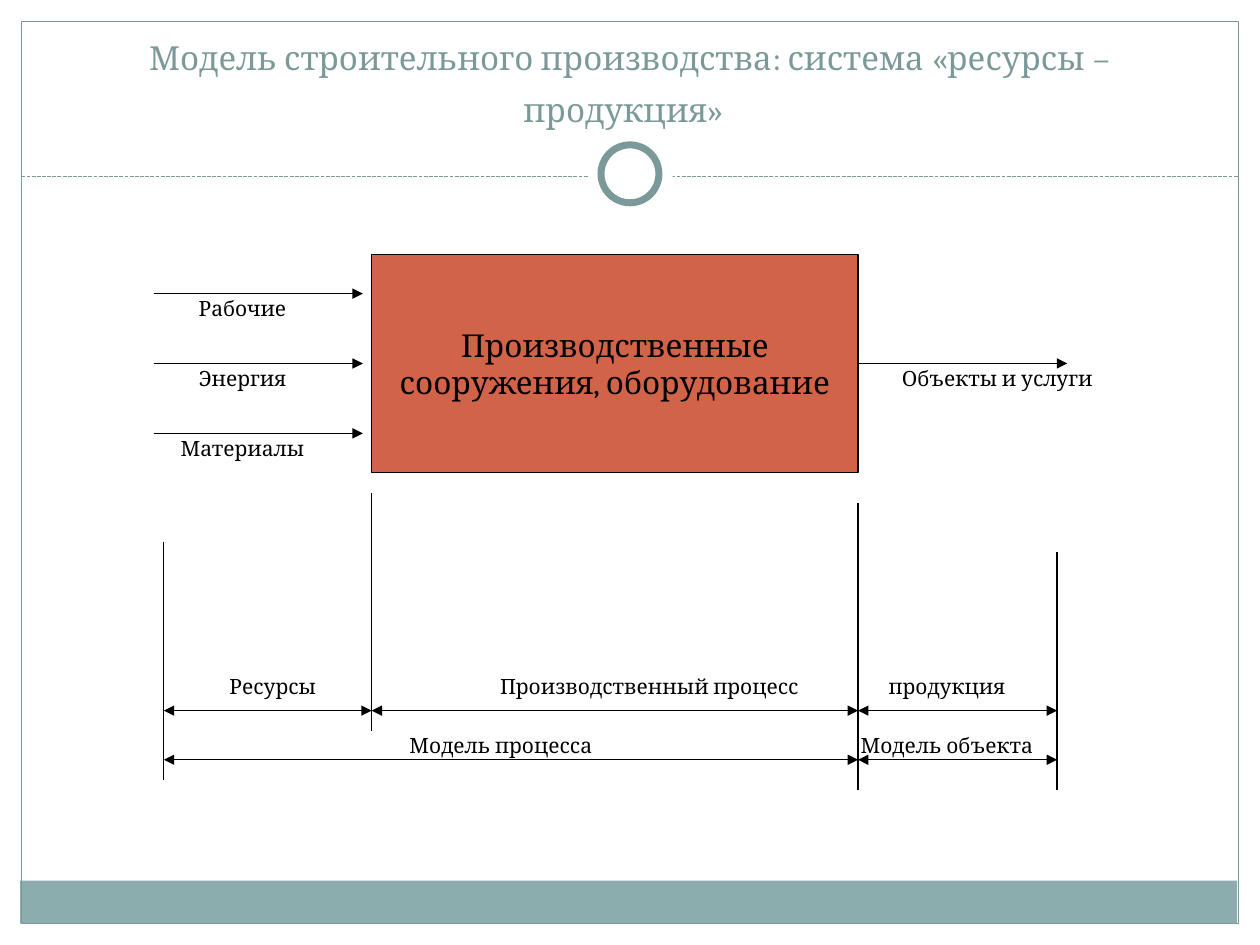
from lxml import etree
from pptx import Presentation
from pptx.dml.color import RGBColor
from pptx.enum.dml import MSO_LINE
from pptx.enum.shapes import MSO_CONNECTOR, MSO_SHAPE
from pptx.enum.text import MSO_ANCHOR, MSO_AUTO_SIZE, PP_ALIGN
from pptx.oxml.ns import qn
from pptx.util import Inches, Pt

RECT, OVAL = MSO_SHAPE.RECTANGLE, MSO_SHAPE.OVAL
STRAIGHT = MSO_CONNECTOR.STRAIGHT
DASH = MSO_LINE.SQUARE_DOT
CENTER = PP_ALIGN.CENTER
MIDDLE, BOTTOM = MSO_ANCHOR.MIDDLE, MSO_ANCHOR.BOTTOM
NO_FIT = MSO_AUTO_SIZE.NONE

FONT = "Cambria"
COLORS = {"ink": "000000", "paper": "FFFFFF", "teal": "7C999A",
          "band": "8CADAE", "box": "D16349"}

TITLE = "Модель строительного производства: система «ресурсы – продукция»"
PROCESS = "Производственные сооружения, оборудование"
INPUTS = ["Рабочие", "Энергия", "Материалы"]
OUTPUT = "Объекты и услуги"

START, BOX_LEFT, BOX_RIGHT, END = 1.3, 2.95, 6.81, 8.39
BOX_TOP, BOX_HEIGHT = 2.02, 1.73
INPUT_TOP, INPUT_STEP = 2.33, 0.555
FLOW_LENGTH = 1.66
STAGE_Y, MODEL_Y = 5.64, 6.03
LABEL_WIDTH, WIDE_LABEL, LABEL_HEIGHT = 1.89, 2.99, 0.39

EXTENSION_LINES = [(BOX_LEFT, 3.91, 5.8), (START, 4.3, 6.19),
                   (BOX_RIGHT, 3.99, 6.27), (END, 4.38, 6.27)]
DIMENSIONS = [(START, BOX_RIGHT, MODEL_Y), (BOX_RIGHT, END, MODEL_Y),
              (START, BOX_LEFT, STAGE_Y), (BOX_LEFT, BOX_RIGHT, STAGE_Y),
              (BOX_RIGHT, END, STAGE_Y)]
DIMENSION_LABELS = [("Ресурсы", 1.22, 5.25, LABEL_WIDTH),
                    ("Производственный процесс", 3.66, 5.25, WIDE_LABEL),
                    ("продукция", 6.57, 5.25, LABEL_WIDTH),
                    ("Модель объекта", 6.57, 5.72, LABEL_WIDTH),
                    ("Модель процесса", 2.48, 5.72, WIDE_LABEL)]


def rgb(name):
    return RGBColor.from_string(COLORS[name])


def style_run(r, size, color):
    r.font.name = FONT
    r.font.size = Pt(size)
    r.font.color.rgb = rgb(color)


def write(tf, text, size, color="ink"):
    tf.text = text
    p = tf.paragraphs[0]
    p.alignment = CENTER
    style_run(p.runs[0], size, color)
    return p


def add_shape(s, kind, x, y, w, h, fill=None, line=None, weight=0.75):
    sp = s.shapes.add_shape(kind, Inches(x), Inches(y), Inches(w), Inches(h))
    sp.shadow.inherit = False
    if fill:
        sp.fill.solid()
        sp.fill.fore_color.rgb = rgb(fill)
    else:
        sp.fill.background()
    if line:
        sp.line.color.rgb = rgb(line)
        sp.line.width = Pt(weight)
    else:
        sp.line.fill.background()
    return sp


def add_line(s, x1, y1, x2, y2, color="ink", ends=(), dash=None):
    c = s.shapes.add_connector(STRAIGHT, Inches(x1), Inches(y1), Inches(x2), Inches(y2))
    c.line.color.rgb = rgb(color)
    c.line.width = Pt(0.75)
    if dash:
        c.line.dash_style = dash
    ln = c.line._get_or_add_ln()
    for end in ends:
        etree.SubElement(ln, qn(f"a:{end}"), type="triangle")
    etree.SubElement(ln.getparent(), qn("a:effectLst"))


def add_label(s, text, x, y, w):
    box = s.shapes.add_textbox(Inches(x), Inches(y), Inches(w), Inches(LABEL_HEIGHT))
    tf = box.text_frame
    tf.word_wrap = False
    tf.vertical_anchor = MIDDLE
    write(tf, text, 12)


def add_frame(s):
    add_shape(s, RECT, 0.16, 6.99, 9.66, 0.34, "band")
    add_shape(s, RECT, 0.17, 0.17, 9.66, 7.16, line="teal")
    add_line(s, 0.17, 1.4, 9.83, 1.4, "teal", dash=DASH)
    add_shape(s, OVAL, 4.67, 1.05, 0.67, 0.67, "paper")
    add_shape(s, OVAL, 4.77, 1.15, 0.46, 0.46, "paper", "teal", 4)


def add_title(s):
    title = s.shapes.title
    title.left, title.top = Inches(0.33), Inches(0.25)
    title.width, title.height = Inches(9.33), Inches(0.83)
    tf = title.text_frame
    tf.word_wrap = True
    tf.auto_size = NO_FIT
    tf.vertical_anchor = BOTTOM
    tf.margin_top, tf.margin_bottom = 0, Inches(0.02)
    p = write(tf, TITLE, 18.9, "teal")
    p.line_spacing = 0.9
    r = p.add_run()
    r.text = " "
    style_run(r, 29.7, "teal")


def add_flows(s):
    sp = add_shape(s, RECT, BOX_LEFT, BOX_TOP, BOX_RIGHT - BOX_LEFT, BOX_HEIGHT, "box", "ink")
    sp.text_frame.word_wrap = True
    sp.text_frame.vertical_anchor = MIDDLE
    write(sp.text_frame, PROCESS, 18)
    flows = [(text, 1.22, INPUT_TOP + i * INPUT_STEP, 0.98) for i, text in enumerate(INPUTS)]
    flows.append((OUTPUT, BOX_RIGHT, INPUT_TOP + INPUT_STEP, 6.97))
    for text, x, y, label_x in flows:
        add_line(s, x, y, x + FLOW_LENGTH, y, ends=["tailEnd"])
        add_label(s, text, label_x, y - 0.08, LABEL_WIDTH)


def add_dimensions(s):
    for x, top, bottom in EXTENSION_LINES:
        add_line(s, x, top, x, bottom)
    for left, right, y in DIMENSIONS:
        add_line(s, left, y, right, y, ends=["headEnd", "tailEnd"])
    for label in DIMENSION_LABELS:
        add_label(s, *label)


def main():
    prs = Presentation()
    prs.slide_width, prs.slide_height = Inches(10), Inches(7.5)
    s = prs.slides.add_slide(prs.slide_layouts[5])
    add_frame(s)
    add_title(s)
    add_flows(s)
    add_dimensions(s)
    prs.save("out.pptx")


if __name__ == "__main__":
    main()
